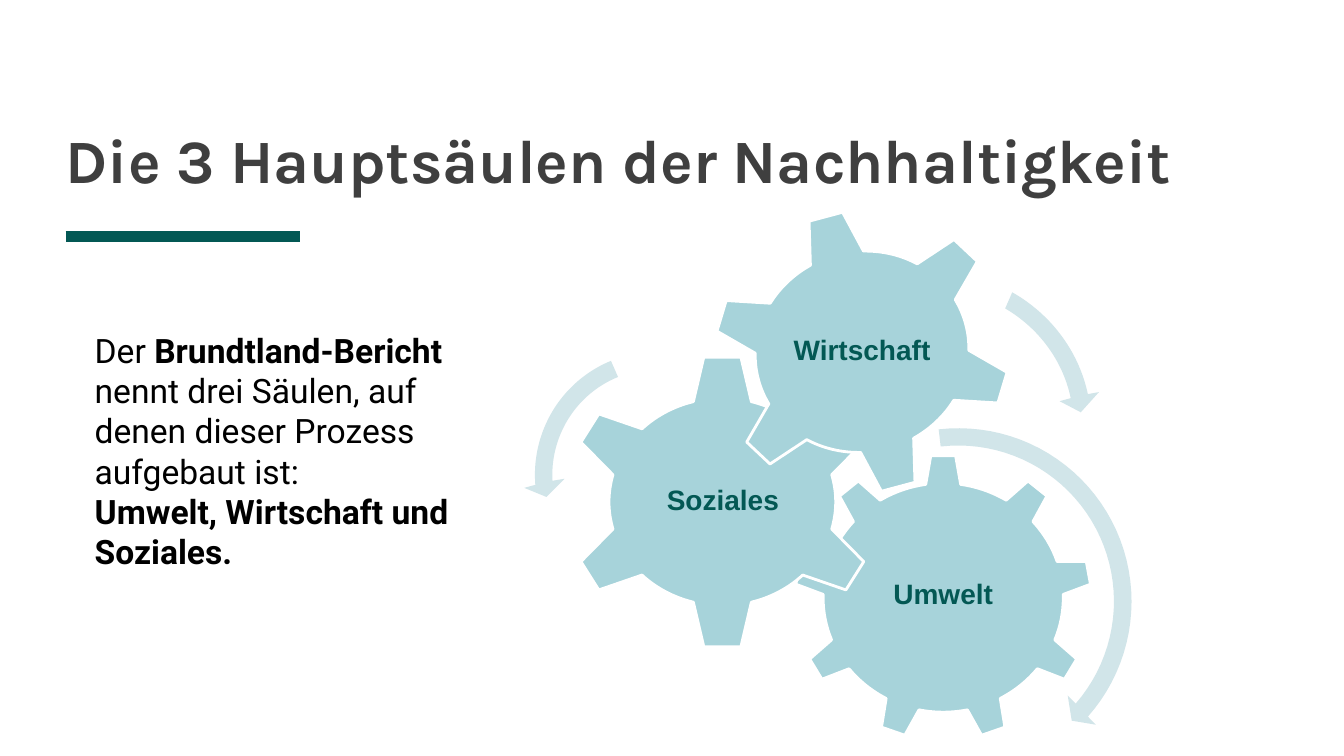
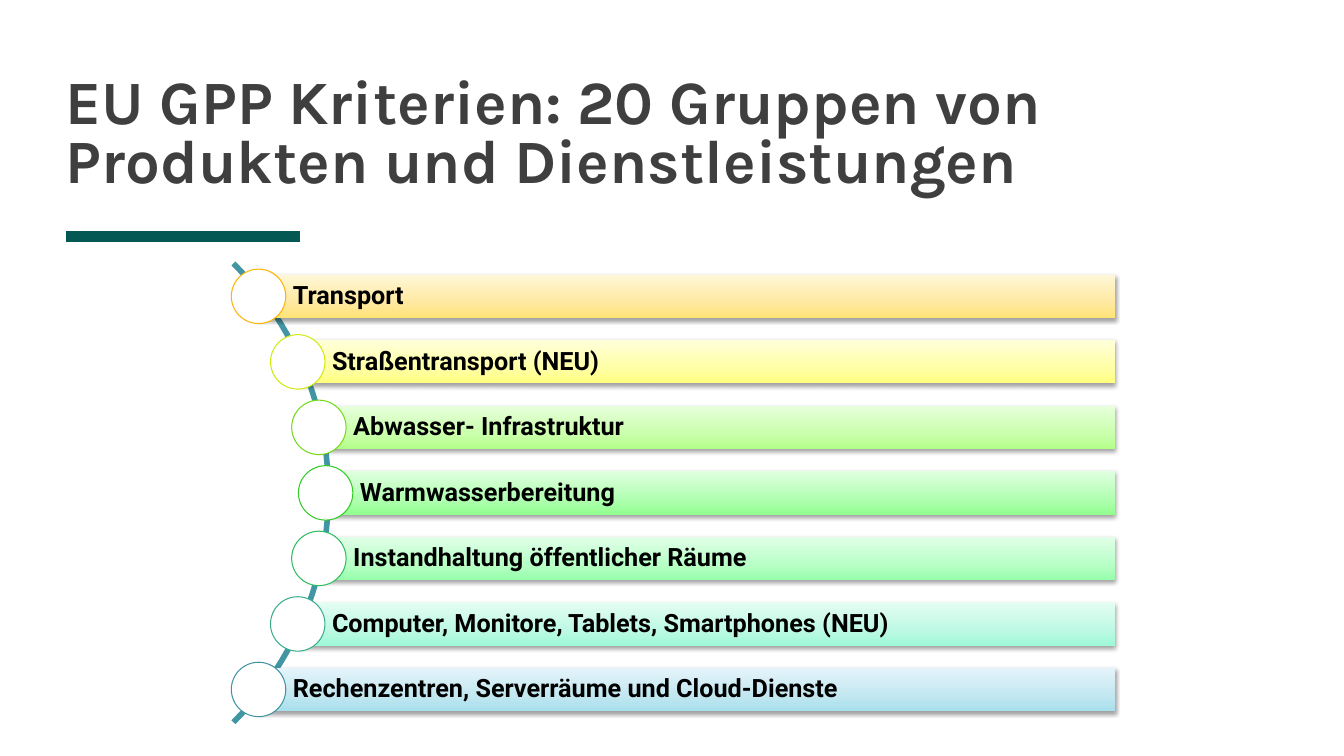
from copy import deepcopy
from dataclasses import dataclass
from math import atan2, cos, dist, hypot, pi, remainder, sin, sqrt, tau

from lxml import etree
from pptx import Presentation
from pptx.dml.color import RGBColor
from pptx.enum.shapes import MSO_CONNECTOR, MSO_SHAPE
from pptx.enum.text import MSO_ANCHOR, MSO_AUTO_SIZE, PP_ALIGN
from pptx.oxml.ns import qn
from pptx.util import Pt

EMU_PER_PX = 9144
STRAIGHT = MSO_CONNECTOR.STRAIGHT
RECT, OVAL = MSO_SHAPE.RECTANGLE, MSO_SHAPE.OVAL
GEAR_6, GEAR_9 = MSO_SHAPE.GEAR_6, MSO_SHAPE.GEAR_9
TOP, MIDDLE, BOTTOM = MSO_ANCHOR.TOP, MSO_ANCHOR.MIDDLE, MSO_ANCHOR.BOTTOM
LEFT, CENTER = PP_ALIGN.LEFT, PP_ALIGN.CENTER
FIXED, GROW = MSO_AUTO_SIZE.NONE, MSO_AUTO_SIZE.SHAPE_TO_FIT_TEXT


@dataclass(frozen=True)
class Theme:
    title: str = "3F3F3F"
    accent: str = "035854"
    gear: str = "A7D3DA"
    arrow: str = "D1E5E9"
    arc: str = "4295A2"
    text: str = "000000"
    white: str = "FFFFFF"
    title_font: str = "Karla"
    body_font: str = "Roboto"
    label_font: str = "Arial"
    title_size: int = 44
    body_size: int = 24
    label_size: int = 20
    bar_size: int = 18


T = Theme()

TITLE = dict(name=T.title_font, size=Pt(T.title_size), color=T.title, bold=True)
BODY = dict(name=T.body_font, size=Pt(T.body_size), color=T.text, bold=False)
STRONG = {**BODY, "bold": True}
LABEL = dict(name=T.label_font, size=Pt(T.label_size), color=T.accent, bold=True)
BAR = dict(name=T.body_font, size=Pt(T.bar_size), color=T.text, bold=True)

GEARS = [
    ("Umwelt", GEAR_9, (788, 451, 295, 284), 0, (847, 518, 177, 146)),
    ("Soziales", GEAR_6, (560, 351, 313, 294), 0, (638, 425, 158, 145)),
    ("Wirtschaft", GEAR_6, (706, 207, 298, 284), 345, (772, 269, 166, 160)),
]

# center, outer edge, head, inner edge
ARROWS = [
    ((950, 596), [(931, 426), (1079, 711)],
     [(1087, 719), (1063, 715), (1059, 690)], [(1067, 698), (933, 443)]),
    ((654, 469), [(606, 358), (531, 481)],
     [(520, 484), (542, 493), (560, 475)], [(548, 477), (613, 374)]),
    ((941, 440), [(1004, 290), (1079, 391)],
     [(1090, 389), (1072, 409), (1051, 398)], [(1062, 395), (997, 306)]),
]

CRITERIA = [
    ("Transport", "FAB506", ("FFE376", "FFE9A1", "FFF7D7")),
    ("Straßentransport (NEU)", "D0EB10", ("FFFF7E", "FFFFA5", "FFFFDA")),
    ("Abwasser- Infrastruktur", "77DA1C", ("B3FF89", "CAFFAC", "E7FFDC")),
    ("Warmwasserbereitung", "32CC26", ("92FF8F", "B1FFB1", "DFFFDF")),
    ("Instandhaltung öffentlicher Räume", "30BC5E", ("97FFAB", "B7FFC6", "E1FFE8")),
    ("Computer, Monitore, Tablets, Smartphones (NEU)", "39AE8F",
     ("9EF9D7", "BDF9E4", "E5FDF3")),
    ("Rechenzentren, Serverräume und Cloud-Dienste", "4393A0",
     ("A6DFED", "C2E7F0", "E6F4FB")),
]


def px(n):
    return round(n * EMU_PER_PX)


def box(*lengths):
    return [px(n) for n in lengths]


def rgb(value):
    return RGBColor.from_string(value)


def set_font(font, fmt):
    for key, value in fmt.items():
        if key == "color":
            font.color.rgb = rgb(value)
        else:
            setattr(font, key, value)


def set_frame(tf, anchor, insets, auto_size=FIXED):
    left, top, right, bottom = box(*insets)
    fmt = dict(word_wrap=True, auto_size=auto_size, vertical_anchor=anchor,
               margin_left=left, margin_top=top,
               margin_right=right, margin_bottom=bottom)
    for key, value in fmt.items():
        setattr(tf, key, value)


def write(tf, paragraphs, align=LEFT, spacing=None):
    for i, runs in enumerate(paragraphs):
        p = tf.add_paragraph() if i else tf.paragraphs[0]
        p.alignment = align
        p.line_spacing = spacing
        for text, fmt in runs:
            r = p.add_run()
            r.text = text
            set_font(r.font, fmt)


def paint(sp, fill=None, line=None, width=1):
    sp.shadow.inherit = False
    if fill:
        sp.fill.solid()
        sp.fill.fore_color.rgb = rgb(fill)
    else:
        sp.fill.background()
    if line:
        sp.line.color.rgb = rgb(line)
        sp.line.width = Pt(width)
    else:
        sp.line.fill.background()


def add_text(s, at, paragraphs, anchor, insets, align=LEFT, spacing=None,
             auto_size=FIXED):
    tf = s.shapes.add_textbox(*box(*at)).text_frame
    set_frame(tf, anchor, insets, auto_size)
    write(tf, paragraphs, align, spacing)


def add_slide(prs, title):
    s = prs.slides.add_slide(prs.slide_layouts[5])
    rule = s.shapes.add_connector(STRAIGHT, *box(65, 235, 298, 235))
    rule.line.color.rgb = rgb(T.accent)
    rule.line.width = Pt(8)
    etree.SubElement(rule._element.spPr, qn("a:effectLst"))
    sp = s.shapes.title
    sp.left, sp.top, sp.width, sp.height = box(65, 22, 1200, 172)
    set_frame(sp.text_frame, BOTTOM, (0, 0, 0, 0))
    write(sp.text_frame, [[(title, TITLE)]], spacing=0.8)
    return s


def sweep(center, start, end, steps=40):
    cx, cy = center
    r0, r1 = dist(center, start), dist(center, end)
    a0 = atan2(start[1] - cy, start[0] - cx)
    turn = remainder(atan2(end[1] - cy, end[0] - cx) - a0, tau)
    points = []
    for i in range(steps + 1):
        t = i / steps
        r, a = r0 + t * (r1 - r0), a0 + t * turn
        points.append((cx + r * cos(a), cy + r * sin(a)))
    return points


def add_outline(s, points, close=True):
    start, *rest = [box(*point) for point in points]
    fb = s.shapes.build_freeform(*start, scale=1.0)
    fb.add_line_segments(rest, close=close)
    return fb.convert_to_shape()


def add_gear(s, name, kind, at, rotation, label_at):
    sp = s.shapes.add_shape(kind, *box(*at))
    sp.rotation = rotation
    paint(sp, T.gear, T.white, 2)
    add_text(s, label_at, [[(name, LABEL)]], MIDDLE, (3, 3, 3, 3), CENTER, 0.9)


def add_arc_arrow(s, center, outer, head, inner):
    points = sweep(center, *outer) + head + sweep(center, *inner)
    paint(add_outline(s, points), T.arrow)


def set_gradient(sp, colors):
    sp.fill.gradient()
    sp.fill.gradient_angle = 90
    stops = sp._element.spPr.find(".//" + qn("a:gsLst"))
    stops.append(deepcopy(stops[0]))
    for stop, position, color in zip(sp.fill.gradient_stops, (0, 0.35, 1), colors):
        stop.position = position
        stop.color.rgb = rgb(color)


def set_shadow(sp):
    effects = sp._element.spPr.find(qn("a:effectLst"))
    shadow = etree.SubElement(effects, qn("a:outerShdw"), blurRad="40000",
                              dist="20000", dir="5400000", rotWithShape="0")
    color = etree.SubElement(shadow, qn("a:srgbClr"), val=T.text)
    etree.SubElement(color, qn("a:alpha"), val="37000")


def add_criterion(s, x, y, text, ring, colors):
    right, height, diameter = 1106, 43, 54
    sp = s.shapes.add_shape(RECT, *box(x, y - height / 2, right - x, height))
    paint(sp)
    set_gradient(sp, colors)
    set_shadow(sp)
    set_frame(sp.text_frame, MIDDLE, (34, 6, 6, 6))
    write(sp.text_frame, [[(text, BAR)]], spacing=0.9)
    corner = x - diameter / 2, y - diameter / 2
    dot = s.shapes.add_shape(OVAL, *box(*corner, diameter, diameter))
    paint(dot, T.white, ring, 0.75)


def build_pillars(prs):
    s = add_slide(prs, "Die 3 Hauptsäulen der Nachhaltigkeit")
    for gear in GEARS:
        add_gear(s, *gear)
    for arrow in ARROWS:
        add_arc_arrow(s, *arrow)
    add_text(s, (84, 322, 399, 252), [
        [("Der ", BODY), ("Brundtland-Bericht", STRONG),
         (" nennt drei Säulen, auf denen dieser Prozess aufgebaut ist:", BODY)],
        [("Umwelt, Wirtschaft und Soziales.", STRONG)],
    ], TOP, (10, 5, 10, 5), auto_size=GROW)


def build_criteria(prs):
    s = add_slide(prs, "EU GPP Kriterien: 20 Gruppen von "
                       "Produkten und Dienstleistungen")
    cx, cy, radius, pitch = 4, 489, 319, 65
    reach = hypot(radius, 0) * sin(pi / 4) + 2
    arc = sweep((cx, cy), (cx + reach, cy - reach), (cx + reach, cy + reach))
    paint(add_outline(s, arc, close=False), line=T.arc, width=4)
    for i, criterion in enumerate(CRITERIA):
        dy = (i - len(CRITERIA) // 2) * pitch
        add_criterion(s, cx + sqrt(radius**2 - dy**2), cy + dy, *criterion)


def main():
    prs = Presentation()
    prs.slide_width, prs.slide_height = box(1333, 750)
    build_pillars(prs)
    build_criteria(prs)
    prs.save("out.pptx")


if __name__ == "__main__":
    main()
